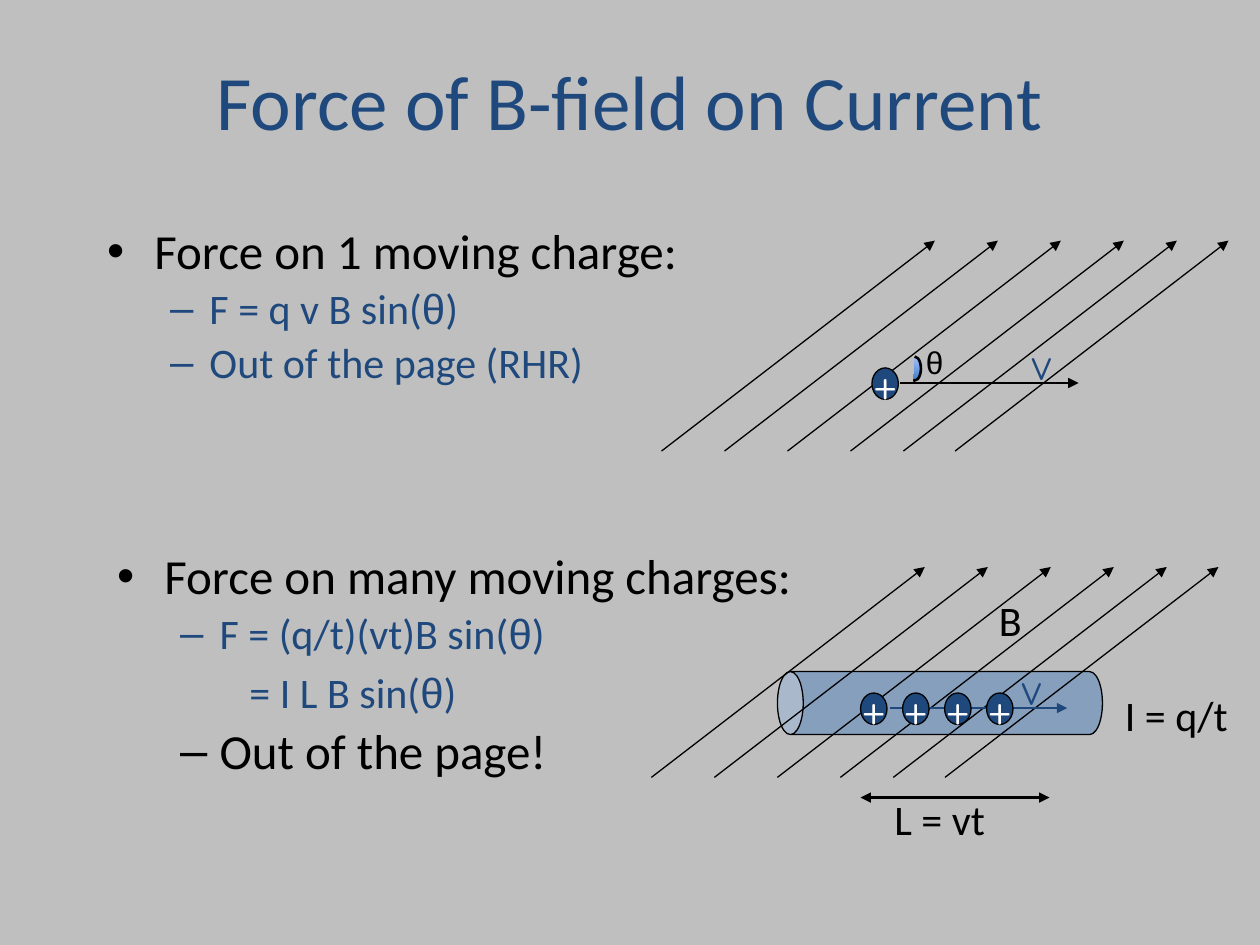
"""Build the slide on the magnetic force acting on a current."""
from lxml.etree import SubElement
from pptx import Presentation
from pptx.dml.color import RGBColor
from pptx.enum.shapes import MSO_CONNECTOR, MSO_SHAPE
from pptx.enum.text import MSO_ANCHOR, MSO_AUTO_SIZE, PP_ALIGN
from pptx.oxml.ns import qn
from pptx.util import Inches, Pt

COLORS = {"back": "BFBFBF", "navy": "1F497D", "blue": "4F81BD", "black": "000000", "white": "FFFFFF"}
RGB = {name: RGBColor.from_string(value) for name, value in COLORS.items()}


def write(p, text, size=24, color="black", font="Calibri"):
    before, theta, after = text.partition("θ")
    for part, face in ((before, font), (theta, "Arial"), (after, font)):
        if part:
            r = p.add_run()
            r.text = part
            r.font.size = Pt(size)
            r.font.name = face
            r.font.color.rgb = RGB[color]


def arrow(shapes, x1, y1, x2, y2, color="black", width=0.75, ends=("tailEnd",)):
    c = shapes.add_connector(MSO_CONNECTOR.STRAIGHT, Inches(x1), Inches(y1), Inches(x2), Inches(y2))
    c.line.color.rgb = RGB[color]
    c.line.width = Pt(width)
    for end in ends:
        SubElement(c.line._get_or_add_ln(), qn(f"a:{end}"), type="triangle")
    SubElement(c._element.spPr, qn("a:effectLst"))


prs = Presentation()
prs.slide_width, prs.slide_height = Inches(10), Inches(7.5)
s = prs.slides.add_slide(prs.slide_layouts[3])
s.background.fill.solid()
s.background.fill.fore_color.rgb = RGB["back"]

title, single_body, many_body = s.placeholders
title.left, title.top, title.width, title.height = Inches(0.75), Inches(0.17), Inches(8.5), Inches(1.25)
title.text_frame.vertical_anchor = MSO_ANCHOR.MIDDLE
p = title.text_frame.paragraphs[0]
p.alignment = PP_ALIGN.CENTER
write(p, "Force of B-field on Current", size=44, color="navy")

bodies = [
    (single_body, 0.75, 1.75, 0.92, [
        ("Force on 1 moving charge:", 0, 28, "black"),
        ("F = q v B sin(θ)", 1, 24, "navy"),
        ("Out of the page (RHR)", 1, 24, "navy")]),
    (many_body, 0.83, 4.33, 2.08, [
        ("Force on many moving charges:", 0, 28, "black"),
        ("F = (q/t)(vt)B sin(θ)", 1, 24, "navy"),
        ("= I L B sin(θ)", None, 24, "navy"),
        ("Out of the page!", 1, 28, "black")]),
]
for sp, x, y, h, items in bodies:
    sp.left, sp.top, sp.width, sp.height = Inches(x), Inches(y), Inches(8.5), Inches(h)
    tf = sp.text_frame
    tf.auto_size = MSO_AUTO_SIZE.NONE
    for i, (text, level, size, color) in enumerate(items):
        p = tf.add_paragraph() if i else tf.paragraphs[0]
        if level is None:
            pPr = p._p.get_or_add_pPr()
            pPr.set("marL", str(Inches(1.05)))
            pPr.set("indent", "0")
            SubElement(pPr, qn("a:buNone"))
        else:
            p.level = level
            p.line_spacing = 0.9
        write(p, text, size=size, color=color)

single = s.shapes
many = s.shapes.add_group_shape().shapes

wire = many.add_shape(MSO_SHAPE.CAN, Inches(7.21), Inches(4.29), Inches(0.5), Inches(2.58))
wire.rotation = 270
wire.adjustments[0] = 0.41
wire.shadow.inherit = False
wire.fill.solid()
wire.fill.fore_color.rgb = RGB["blue"]
SubElement(wire.fill._xPr.find(qn("a:solidFill"))[0], qn("a:alpha"), val="50000")
wire.line.color.rgb = RGB["black"]
wire.line.width = Pt(0.75)

for shapes, x, y in ((single, 5.25, 3.58), (many, 5.17, 6.17)):
    for dx in (0, 0.5, 1, 1.5, 1.92, 2.33):
        arrow(shapes, x + dx, y, x + dx + 2.17, y - 1.67)

arrow(single, 7.14, 3.04, 8.56, 3.04)
arrow(many, 7.06, 5.62, 8.47, 5.62, color="navy")
arrow(many, 6.83, 6.33, 8.33, 6.33, width=1.5, ends=("headEnd", "tailEnd"))

charges = [(single, 6.92, 2.92)] + [(many, 6.83 + i / 3, 5.5) for i in range(4)]
for shapes, x, y in charges:
    sp = shapes.add_shape(MSO_SHAPE.OVAL, Inches(x), Inches(y), Inches(0.21), Inches(0.25))
    sp.shadow.inherit = False
    sp.fill.solid()
    sp.fill.fore_color.rgb = RGB["navy"]
    sp.line.color.rgb = RGB["black"]
    sp.line.width = Pt(0.75)
    tf = sp.text_frame
    tf.word_wrap = False
    tf.vertical_anchor = MSO_ANCHOR.MIDDLE
    tf.paragraphs[0].alignment = PP_ALIGN.CENTER
    write(tf.paragraphs[0], "+", color="white", font="Quicksand")

angle = single.add_shape(MSO_SHAPE.ARC, Inches(7.21), Inches(2.83), Inches(0.1), Inches(0.19))
angle.adjustments[1] = 58
angle.shadow.inherit = False
angle.line.color.rgb = RGB["black"]
angle.line.width = Pt(1.5)

labels = [
    (single, "v", 8.08, 2.64, 0.5, 0.5, {"color": "navy", "font": "Quicksand"}),
    (single, "θ", 7.25, 2.67, 0.5, 0.4, {"size": 18}),
    (many, "v", 8, 5.22, 0.5, 0.5, {"color": "navy", "font": "Quicksand"}),
    (many, "L = vt", 7, 6.25, 1.67, 0.5, {}),
    (many, "B", 7.83, 4.67, 0.5, 0.5, {}),
    (many, "I = q/t", 8.83, 5.42, 1.17, 0.5, {}),
]
for shapes, text, x, y, w, h, style in labels:
    tf = shapes.add_textbox(Inches(x), Inches(y), Inches(w), Inches(h)).text_frame
    tf.word_wrap = True
    write(tf.paragraphs[0], text, **style)

prs.save("out.pptx")
